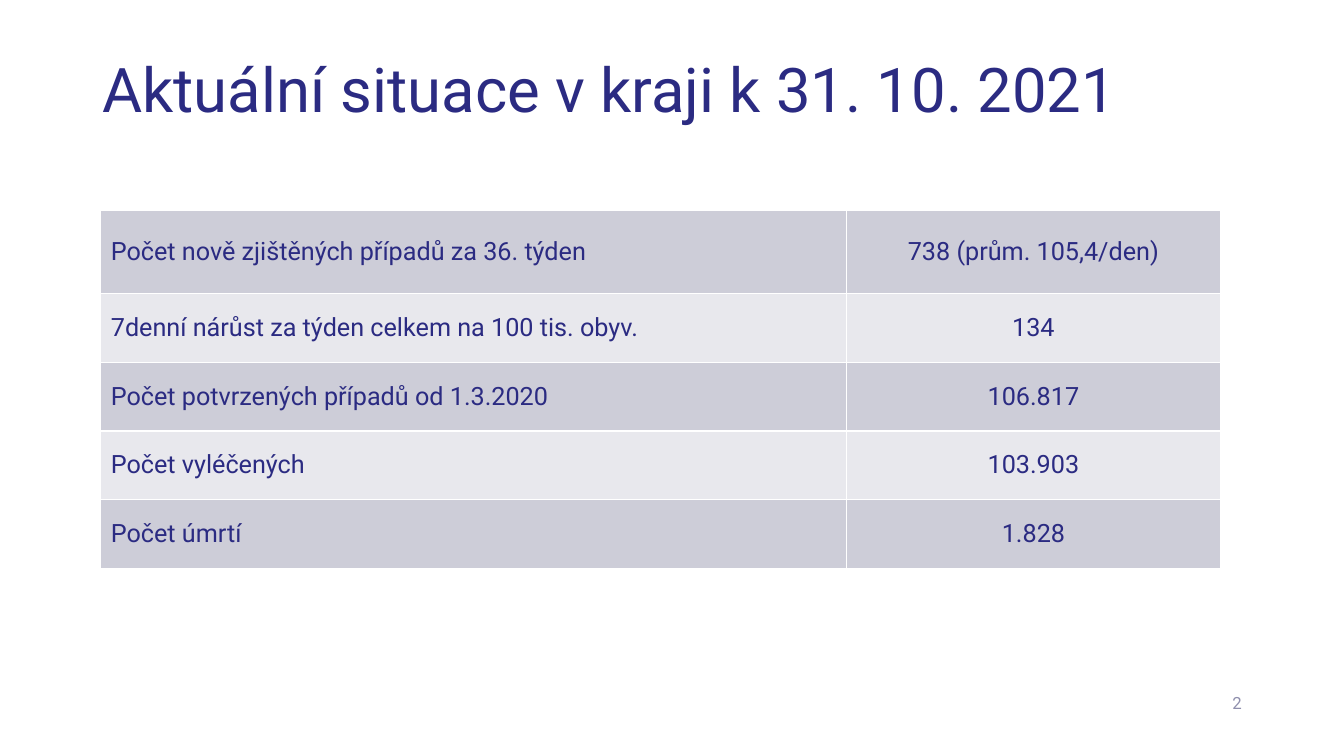
from lxml import etree
from pptx import Presentation
from pptx.dml.color import RGBColor
from pptx.enum.text import MSO_ANCHOR as Anchor, PP_ALIGN as Align
from pptx.oxml.ns import qn
from pptx.util import Pt

TITLE = "Aktuální situace v kraji k 31. 10. 2021"
PAGE = "2"
ROWS = [
    ("Počet nově zjištěných případů za 36. týden", "738 (prům. 105,4/den)"),
    ("7denní nárůst za týden celkem na 100 tis. obyv.", "134"),
    ("Počet potvrzených případů od 1.3.2020", "106.817"),
    ("Počet vyléčených", "103.903"),
    ("Počet úmrtí", "1.828"),
]
FONT, NAVY, GREY, WHITE = "Roboto", "2B2B82", "8F8FAD", "FFFFFF"
BANDS = ("CDCDD8", "E8E8ED")
COLS = (532.8, 266.8)
FIRST_ROW, OTHER_ROW = 59.5, 49.2


def color(value):
    return RGBColor.from_string(value)


def write(tf, text, size=18, fill=NAVY, align=Align.LEFT, spacing=1.0):
    tf.word_wrap = True
    p = tf.paragraphs[0]
    p.alignment, p.line_spacing = align, spacing
    r = p.add_run()
    r.text = text
    r.font.name, r.font.size = FONT, Pt(size)
    r.font.color.rgb = color(fill)


def add_borders(cell, line_color, width):
    props = cell._tc.get_or_add_tcPr()
    for i, side in enumerate(("lnL", "lnR", "lnT", "lnB")):
        ln = etree.Element(qn(f"a:{side}"), w=str(Pt(width)))
        fill = etree.SubElement(ln, qn("a:solidFill"))
        etree.SubElement(fill, qn("a:srgbClr"), val=line_color)
        props.insert(i, ln)


def add_title(s):
    sp = s.shapes.title
    sp.left, sp.top, sp.width, sp.height = Pt(66), Pt(21.6), Pt(828), Pt(72)
    sp.text_frame.vertical_anchor = Anchor.BOTTOM
    write(sp.text_frame, TITLE, size=44, spacing=0.9)


def add_page_number(s):
    sp = s.shapes.add_textbox(Pt(812), Pt(487.5), Pt(82), Pt(28.8))
    sp.text_frame.vertical_anchor = Anchor.MIDDLE
    write(sp.text_frame, PAGE, size=12, fill=GREY, align=Align.RIGHT)


def add_figures(s):
    heights = [FIRST_ROW] + [OTHER_ROW] * (len(ROWS) - 1)
    frame = s.shapes.add_table(len(ROWS), len(COLS), Pt(72), Pt(150),
                               Pt(sum(COLS)), Pt(sum(heights)))
    table = frame.table
    table.first_row = False
    for column, width in zip(table.columns, COLS):
        column.width = Pt(width)
    for i, (row, height) in enumerate(zip(ROWS, heights)):
        table.rows[i].height = Pt(height)
        for j, (text, align) in enumerate(zip(row, (Align.LEFT, Align.CENTER))):
            cell = table.cell(i, j)
            cell.vertical_anchor = Anchor.MIDDLE
            cell.fill.solid()
            cell.fill.fore_color.rgb = color(BANDS[i % 2])
            add_borders(cell, WHITE, 1)
            write(cell.text_frame, text, align=align)


def main():
    prs = Presentation()
    prs.slide_width, prs.slide_height = Pt(960), Pt(540)
    s = prs.slides.add_slide(prs.slide_layouts[5])
    add_title(s)
    add_page_number(s)
    add_figures(s)
    prs.save("out.pptx")


if __name__ == "__main__":
    main()
